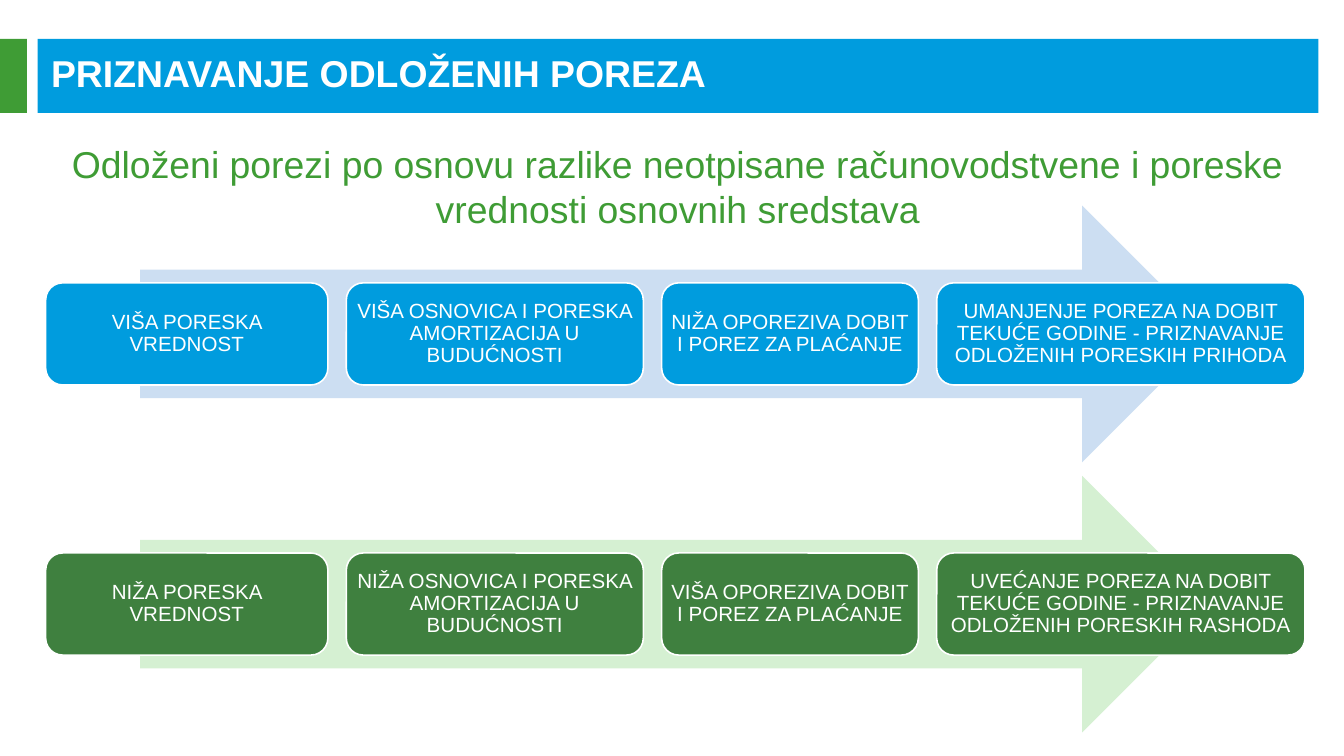
from dataclasses import dataclass

from pptx import Presentation
from pptx.dml.color import RGBColor
from pptx.enum.shapes import MSO_SHAPE
from pptx.enum.text import MSO_ANCHOR, MSO_AUTO_SIZE, PP_ALIGN
from pptx.util import Inches, Pt

RECTANGLE = MSO_SHAPE.RECTANGLE
ROUNDED = MSO_SHAPE.ROUNDED_RECTANGLE
RIGHT_ARROW = MSO_SHAPE.RIGHT_ARROW
MIDDLE, TOP = MSO_ANCHOR.MIDDLE, MSO_ANCHOR.TOP
LEFT, CENTER = PP_ALIGN.LEFT, PP_ALIGN.CENTER
NO_AUTO_SIZE = MSO_AUTO_SIZE.NONE
TITLE_ONLY = 5


@dataclass(frozen=True)
class Theme:
    font: str = "Arial"
    heading_size: int = 20
    step_size: int = 11
    white: str = "FFFFFF"
    blue: str = "009CDE"
    pale_blue: str = "CCDEF2"
    green: str = "3F9C35"
    dark_green: str = "3F803F"
    pale_green: str = "D5F0D2"


THEME = Theme()

STEP_WIDTHS = [2.10, 2.21, 1.91, 2.74]
STEP_HEIGHT = 0.76
FLOW_HEIGHT = 1.91

HIGHER_TAX_VALUE = [
    "VIŠA PORESKA VREDNOST",
    "VIŠA OSNOVICA I PORESKA AMORTIZACIJA U BUDUĆNOSTI",
    "NIŽA OPOREZIVA DOBIT I POREZ ZA PLAĆANJE",
    "UMANJENJE POREZA NA DOBIT TEKUĆE GODINE - PRIZNAVANJE ODLOŽENIH PORESKIH PRIHODA",
]
LOWER_TAX_VALUE = [
    "NIŽA PORESKA VREDNOST",
    "NIŽA OSNOVICA I PORESKA AMORTIZACIJA U BUDUĆNOSTI",
    "VIŠA OPOREZIVA DOBIT I POREZ ZA PLAĆANJE",
    "UVEĆANJE POREZA NA DOBIT TEKUĆE GODINE - PRIZNAVANJE ODLOŽENIH PORESKIH RASHODA",
]


def add_shape(slide, kind, left, top, width, height, fill):
    """Add a filled shape with neither line nor shadow."""
    shape = slide.shapes.add_shape(
        kind, Inches(left), Inches(top), Inches(width), Inches(height))
    shape.shadow.inherit = False
    shape.line.fill.background()
    shape.fill.solid()
    shape.fill.fore_color.rgb = RGBColor.from_string(fill)
    return shape


def write(shape, text, size, color, align=CENTER, anchor=MIDDLE,
          margins=(0.1, 0.05), bold=False, line_spacing=1.0):
    frame = shape.text_frame
    frame.auto_size = NO_AUTO_SIZE
    frame.word_wrap = True
    frame.vertical_anchor = anchor
    frame.margin_left = frame.margin_right = Inches(margins[0])
    frame.margin_top = frame.margin_bottom = Inches(margins[1])
    frame.text = text
    paragraph = frame.paragraphs[0]
    paragraph.alignment = align
    paragraph.line_spacing = line_spacing
    paragraph.font.name = THEME.font
    paragraph.font.size = Pt(size)
    paragraph.font.bold = bold
    paragraph.font.color.rgb = RGBColor.from_string(color)


def add_title_bar(slide, left, top, width, height):
    add_shape(slide, RECTANGLE, left, top, width, height, THEME.blue)
    add_shape(slide, RECTANGLE, 0, top, left - 0.08, height, THEME.green)

    title = slide.shapes.title
    title.left, title.top = Inches(left), Inches(top + 0.1)
    title.width, title.height = Inches(width - 0.08), Inches(0.3)
    write(title, "PRIZNAVANJE ODLOŽENIH POREZA", THEME.heading_size,
          THEME.white, align=LEFT, margins=(0.1, 0), bold=True)
    # Bring the title in front of the bar.
    title.element.getparent().append(title.element)


def add_subtitle(slide, left, top, width, height):
    box = slide.shapes.add_textbox(
        Inches(left), Inches(top), Inches(width), Inches(height))
    write(box, "Odloženi porezi po osnovu razlike neotpisane računovodstvene "
          "i poreske vrednosti osnovnih sredstava",
          THEME.heading_size, THEME.green, anchor=TOP)


def add_flow(slide, left, top, width, height, steps, step_color, arrow_color):
    """Add a row of steps spread evenly across an arrow behind them."""
    arrow_width = width * 0.85
    add_shape(slide, RIGHT_ARROW, left + (width - arrow_width) / 2, top,
              arrow_width, height, arrow_color)

    gap = (width - sum(STEP_WIDTHS)) / (len(STEP_WIDTHS) - 1)
    step_top = top + (height - STEP_HEIGHT) / 2
    step_left = left
    for text, step_width in zip(steps, STEP_WIDTHS):
        step = add_shape(slide, ROUNDED, step_left, step_top,
                         step_width, STEP_HEIGHT, step_color)
        step.line.color.rgb = RGBColor.from_string(THEME.white)
        step.line.width = Pt(0.85)
        write(step, text, THEME.step_size, THEME.white,
              margins=(0.01, 0.01), line_spacing=0.9)
        step_left += step_width + gap


def main():
    presentation = Presentation()
    presentation.slide_width = Inches(10)
    presentation.slide_height = Inches(10 * 9 / 16)
    slide = presentation.slides.add_slide(presentation.slide_layouts[TITLE_ONLY])

    add_title_bar(slide, 0.28, 0.29, 9.53, 0.55)
    add_subtitle(slide, 0.28, 1, 9.53, 0.76)
    add_flow(slide, 0.34, 1.53, 9.37, FLOW_HEIGHT, HIGHER_TAX_VALUE,
             THEME.blue, THEME.pale_blue)
    add_flow(slide, 0.34, 3.54, 9.37, FLOW_HEIGHT, LOWER_TAX_VALUE,
             THEME.dark_green, THEME.pale_green)

    presentation.save("out.pptx")


if __name__ == "__main__":
    main()
